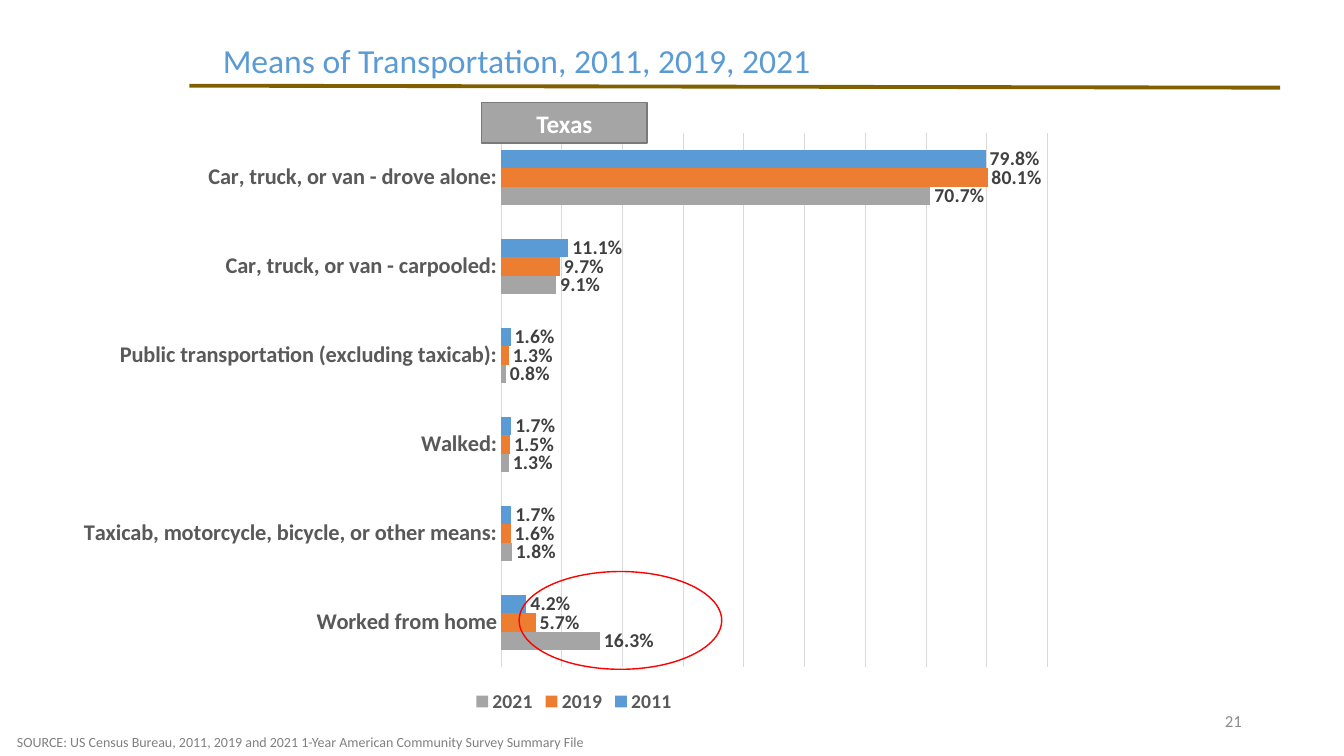
import pptx
import pptx.chart.data
import pptx.dml.color
import pptx.enum.chart
import pptx.enum.shapes
import pptx.enum.text
import pptx.oxml
import pptx.oxml.ns
import pptx.util
from lxml import etree

COLUMNS, ROWS = 160, 90
CELL = pptx.util.Inches(1 / 12)
FONT = "Calibri"
HEADER = (22.56, 4.68, 129.84, 5.76)
CHART = (9.6, 14.4, 117.48, 71.04)
FOOTER = (0.84, 83.4, 148.2, 6.6)
PLOT_SHARES = {"x": 0.426, "y": 0.02, "w": 0.554, "h": 0.895}
MEANS = [
    "Car, truck, or van - drove alone:",
    "Car, truck, or van - carpooled:",
    "Public transportation (excluding taxicab):",
    "Walked:",
    "Taxicab, motorcycle, bicycle, or other means:",
    "Worked from home",
]
YEARS = [
    ("2011", "5B9BD5", [0.798, 0.111, 0.016, 0.017, 0.017, 0.042]),
    ("2019", "ED7D31", [0.801, 0.097, 0.013, 0.015, 0.016, 0.057]),
    ("2021", "A5A5A5", [0.707, 0.091, 0.008, 0.013, 0.018, 0.163]),
]


def paint(target, color):
    """Give a fill a solid colour from a hex string."""
    target.solid()
    target.fore_color.rgb = pptx.dml.color.RGBColor.from_string(color)


def outline(line, color, points):
    """Set the colour and width of a line."""
    paint(line.fill, color)
    line.width = pptx.util.Pt(points)


def style(font, size, color, bold=False):
    """Set the face, size, colour and weight of a font."""
    font.name = FONT
    font.size = pptx.util.Pt(size)
    font.bold = bold
    paint(font.fill, color)


def place(box, left, top, width, height):
    """Turn grid offsets inside a box into slide lengths."""
    cells = (box[0] + left, box[1] + top, width, height)
    return [round(cell * CELL) for cell in cells]


def write(shape, text, size, color, align, bold=False, wrap=False):
    """Put one formatted paragraph into a shape."""
    frame = shape.text_frame
    frame.text = text
    frame.word_wrap = wrap
    para = frame.paragraphs[0]
    para.alignment = align
    style(para.runs[0].font, size, color, bold)
    return para


def add_header(page, box):
    """Place the title and the rule under it."""
    left, top, right, bottom = place(box, 0, 5.52, box[2], 0.24)
    rule = page.shapes.add_connector(
        pptx.enum.shapes.MSO_CONNECTOR.STRAIGHT, left, top, left + right, top + bottom)
    outline(rule.line, "806000", 2.75)
    etree.SubElement(rule.element.spPr, pptx.oxml.ns.qn("a:effectLst"))

    title = page.shapes.title
    title.left, title.top, title.width, title.height = place(box, 2.76, 0, 72.96, 5.52)
    para = write(title, "Means of Transportation, 2011, 2019, 2021", 24, "5B9BD5",
                 pptx.enum.text.PP_ALIGN.LEFT)
    para.line_spacing = 0.9
    title.text_frame.vertical_anchor = pptx.enum.text.MSO_ANCHOR.TOP
    title.text_frame.auto_size = pptx.enum.text.MSO_AUTO_SIZE.SHAPE_TO_FIT_TEXT


def fix_plot(chart):
    """Pin the inner plot area to its shares of the chart."""
    modes = "".join(f'<c:{side}Mode val="edge"/>' for side in "xy")
    shares = "".join(f'<c:{name} val="{share}"/>' for name, share in PLOT_SHARES.items())
    layout = pptx.oxml.parse_xml(
        f'<c:layout {pptx.oxml.ns.nsdecls("c")}><c:manualLayout>'
        f'<c:layoutTarget val="inner"/>{modes}{shares}</c:manualLayout></c:layout>')
    plot_area = chart.element.chart.plotArea
    for old in plot_area.findall(pptx.oxml.ns.qn("c:layout")):
        plot_area.remove(old)
    plot_area.insert(0, layout)


def format_axes(chart):
    """List the means downwards and keep only the value gridlines."""
    means = chart.category_axis
    means.reverse_order = True
    means.major_tick_mark = pptx.enum.chart.XL_TICK_MARK.NONE
    style(means.tick_labels.font, 16, "595959", True)
    outline(means.format.line, "D9D9D9", 0.75)
    shares = chart.value_axis
    shares.visible = False
    shares.minimum_scale, shares.maximum_scale, shares.major_unit = 0, 0.9, 0.1
    shares.has_major_gridlines = True
    outline(shares.major_gridlines.format.line, "D9D9D9", 0.75)


def add_bars(page, box):
    """Place the clustered bar chart."""
    data = pptx.chart.data.CategoryChartData(number_format="0.0%")
    data.categories = MEANS
    for year, _, values in YEARS:
        data.add_series(year, values)
    chart = page.shapes.add_chart(
        pptx.enum.chart.XL_CHART_TYPE.BAR_CLUSTERED,
        *place(box, 0, 0, *box[2:]), data).chart
    style(chart.font, 14, "000000", True)
    chart.has_title = False
    chart.has_legend = True
    chart.legend.position = pptx.enum.chart.XL_LEGEND_POSITION.BOTTOM
    chart.legend.include_in_layout = False
    style(chart.legend.font, 14, "595959", True)
    format_axes(chart)
    fix_plot(chart)

    plot = chart.plots[0]
    plot.gap_width = 182
    plot.vary_by_categories = False
    for series, (_, color, _) in zip(plot.series, YEARS):
        paint(series.format.fill, color)
        labels = series.data_labels
        labels.show_value = True
        labels.number_format = "0.0%"
        labels.number_format_is_linked = False
        labels.position = pptx.enum.chart.XL_LABEL_POSITION.OUTSIDE_END
        style(labels.font, 14, "404040", True)


def add_marks(page, box):
    """Place the state tag and the ring around working from home."""
    tag = page.shapes.add_shape(
        pptx.enum.shapes.MSO_SHAPE.RECTANGLE, *place(box, 47.76, -2.16, 19.68, 4.8))
    tag.shadow.inherit = False
    paint(tag.fill, "A5A5A5")
    outline(tag.line, "7A7A7A", 1)
    write(tag, "Texas", 18, "FFFFFF", pptx.enum.text.PP_ALIGN.CENTER, True, True)

    ring = page.shapes.add_shape(
        pptx.enum.shapes.MSO_SHAPE.OVAL, *place(box, 52.2, 53.64, 24.12, 11.64))
    ring.shadow.inherit = False
    ring.fill.background()
    outline(ring.line, "FF0000", 1)


def add_footer(page, box):
    """Place the page number and the source."""
    number = page.shapes.add_textbox(*place(box, 112.2, 0, 36, 4.8))
    write(number, "21", 12, "8C8C8C", pptx.enum.text.PP_ALIGN.RIGHT, wrap=True)
    number.text_frame.vertical_anchor = pptx.enum.text.MSO_ANCHOR.MIDDLE
    source = page.shapes.add_textbox(*place(box, 0, 3.36, 70.68, 3.24))
    write(source, "SOURCE: US Census Bureau, 2011, 2019 and 2021 1-Year American "
          "Community Survey Summary File", 10, "808080", pptx.enum.text.PP_ALIGN.LEFT)


def main():
    """Build and save the deck."""
    deck = pptx.Presentation()
    deck.slide_width, deck.slide_height = COLUMNS * CELL, ROWS * CELL
    page = deck.slides.add_slide(deck.slide_layouts.get_by_name("Title Only"))
    add_header(page, HEADER)
    add_bars(page, CHART)
    add_marks(page, CHART)
    add_footer(page, FOOTER)
    deck.save("out.pptx")


if __name__ == "__main__":
    main()
